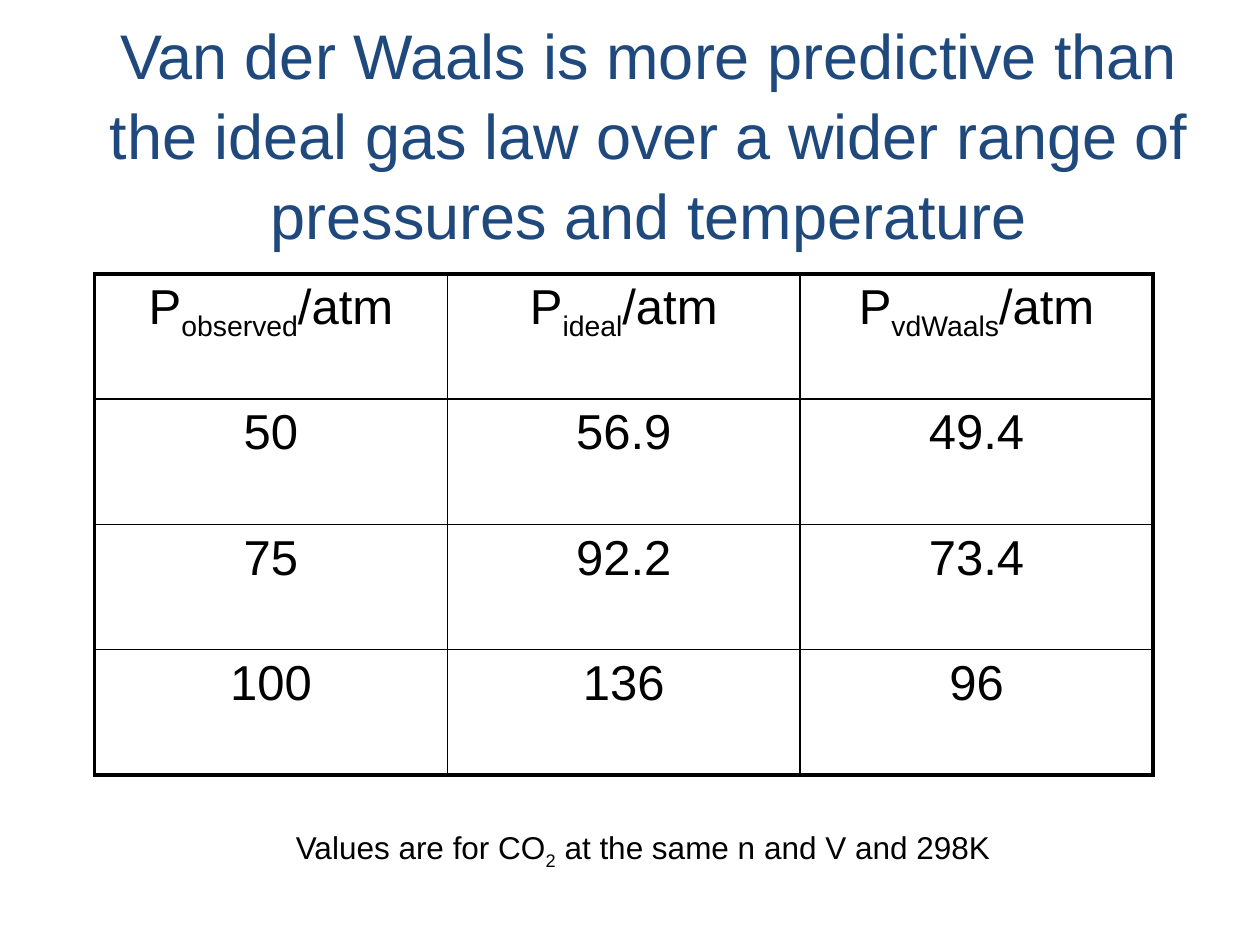
from lxml.etree import SubElement
from pptx import Presentation
from pptx.dml.color import RGBColor
from pptx.enum.text import MSO_ANCHOR, MSO_AUTO_SIZE, PP_ALIGN
from pptx.oxml.ns import qn
from pptx.util import Inches, Pt

FONT = "Arial"
BLACK, NAVY = "000000", "1F497D"
THICK, THIN = 2.25, 1
ROWS = [
    [("P", "observed", "/atm"), ("P", "ideal", "/atm"), ("P", "vdWaals", "/atm")],
    [("50",), ("56.9",), ("49.4",)],
    [("75",), ("92.2",), ("73.4",)],
    [("100",), ("136",), ("96",)],
]


def color(value):
    """Turn a hex string into a colour."""
    return RGBColor.from_string(value)


def area(prs, left, top, width, height):
    """Turn shares of the slide into a box of lengths."""
    w, h = prs.slide_width, prs.slide_height
    return int(left * w), int(top * h), int(width * w), int(height * h)


def write(p, parts, size, fill, align=PP_ALIGN.LEFT):
    """Write text parts into a paragraph, with every second part as a subscript."""
    p.alignment = align
    for i, part in enumerate(parts):
        r = p.add_run()
        r.text = part
        r.font.name, r.font.size = FONT, Pt(size)
        r.font.color.rgb = color(fill)
        if i % 2:
            r._r.get_or_add_rPr().set("baseline", "-25000")


def set_borders(cell, widths):
    """Draw the four sides of a cell, given as a mapping from side to points."""
    tc_pr = cell._tc.get_or_add_tcPr()
    for side, width in widths.items():
        ln = SubElement(tc_pr, qn(f"a:ln{side}"), w=str(Pt(width)))
        solid = SubElement(ln, qn("a:solidFill"))
        SubElement(solid, qn("a:srgbClr"), val=BLACK)


def add_title(s, box, text):
    """Place and format the slide title."""
    sp = s.shapes.title
    sp.left, sp.top, sp.width, sp.height = box
    tf = sp.text_frame
    tf.word_wrap = True
    tf.auto_size = MSO_AUTO_SIZE.NONE
    tf.vertical_anchor = MSO_ANCHOR.MIDDLE
    write(tf.paragraphs[0], [text], 36, NAVY, PP_ALIGN.CENTER)
    tf.paragraphs[0].line_spacing = 1.06


def add_pressure_table(s, box, rows):
    """Fill the box with an even grid of pressures inside a thick frame."""
    last_row, last_col = len(rows) - 1, len(rows[0]) - 1
    table = s.shapes.add_table(len(rows), len(rows[0]), *box).table
    table.first_row = table.horz_banding = False
    for i, row in enumerate(rows):
        for j, parts in enumerate(row):
            cell = table.cell(i, j)
            set_borders(cell, {
                "L": THICK if j == 0 else THIN,
                "R": THICK if j == last_col else THIN,
                "T": THICK if i == 0 else THIN,
                "B": THICK if i == last_row else THIN,
            })
            cell.fill.background()
            write(cell.text_frame.paragraphs[0], parts, 28, BLACK, PP_ALIGN.CENTER)


def add_caption(s, box, parts):
    """Place the note below the table."""
    tf = s.shapes.add_textbox(*box).text_frame
    tf.word_wrap = True
    tf.auto_size = MSO_AUTO_SIZE.SHAPE_TO_FIT_TEXT
    write(tf.paragraphs[0], parts, 18, BLACK)


def main():
    """Build and save the slide."""
    prs = Presentation()
    prs.slide_width, prs.slide_height = Inches(10), Inches(7.5)
    s = prs.slides.add_slide(prs.slide_layouts[5])
    add_title(s, area(prs, 0.075, 0.02, 0.88, 0.24),
              "Van der Waals is more predictive than the ideal gas law "
              "over a wider range of pressures and temperature")
    add_pressure_table(s, area(prs, 0.075, 0.29, 0.84, 0.53), ROWS)
    add_caption(s, area(prs, 0.225, 0.87, 0.58, 0.05),
                ["Values are for CO", "2", " at the same n and V and 298K"])
    prs.save("out.pptx")


if __name__ == "__main__":
    main()
